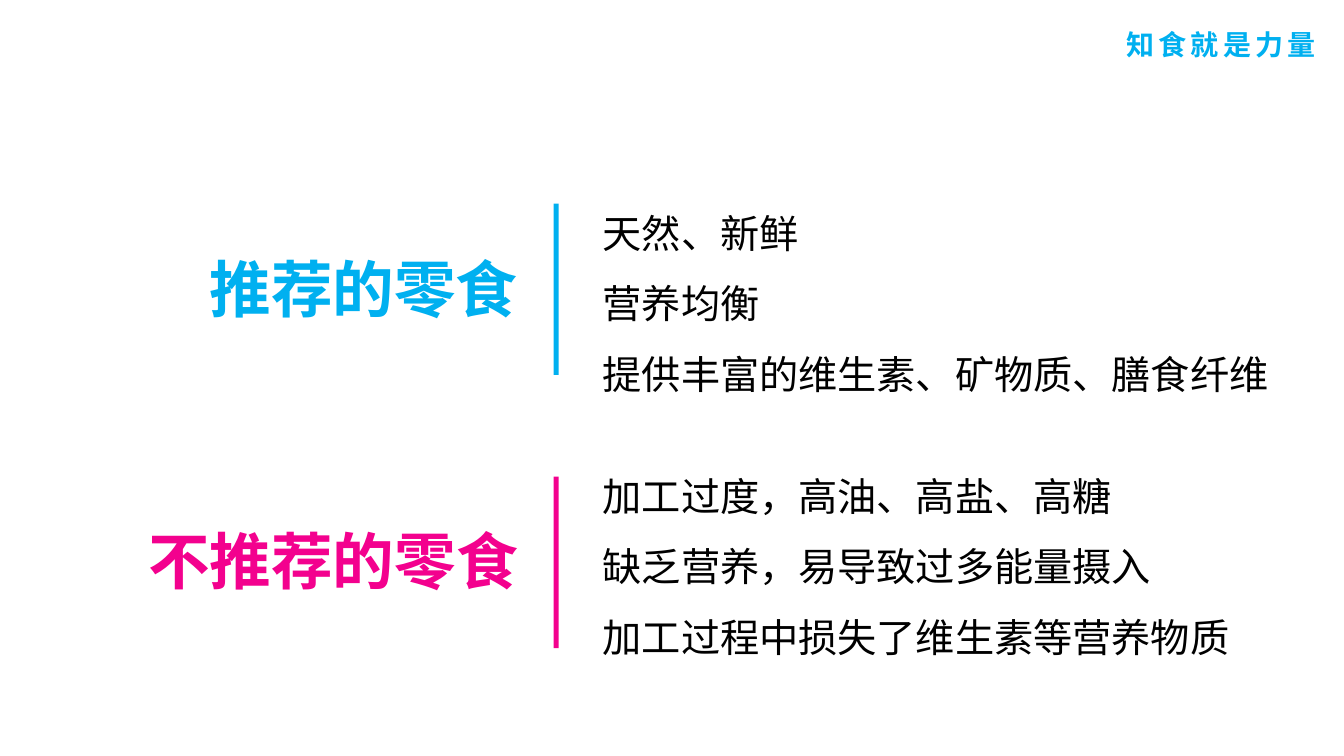
import pptx
import pptx.util
import pptx.dml.color
import pptx.enum.shapes
import pptx.enum.text
import pptx.oxml
import pptx.oxml.ns

Inches = pptx.util.Inches
RGBColor = pptx.dml.color.RGBColor
ALIGN = pptx.enum.text.PP_ALIGN

BLUE = RGBColor(0x00, 0xB0, 0xF0)
PINK = RGBColor(0xF3, 0x01, 0x8E)
BLACK = RGBColor(0x00, 0x00, 0x00)
FONT = "Noto Sans CJK SC"


def add_text(slide, box, lines, size, color, bold=False,
             align=ALIGN.LEFT, leading=1.0, gap=0):
    """Add a text box with one paragraph per line; gap is in points."""
    shape = slide.shapes.add_textbox(*(Inches(n) for n in box))
    frame = shape.text_frame
    frame.word_wrap = True
    frame.auto_size = pptx.enum.text.MSO_AUTO_SIZE.SHAPE_TO_FIT_TEXT
    for i, line in enumerate(lines):
        para = frame.paragraphs[0] if i == 0 else frame.add_paragraph()
        para.alignment = align
        para.line_spacing = leading
        run = para.add_run()
        run.text = line
        font = run.font
        font.name = FONT
        font.size = pptx.util.Pt(size)
        font.bold = bold
        font.color.rgb = color
        # East Asian typeface and letter spacing
        props = run._r.get_or_add_rPr()
        props.set("lang", "zh-CN")
        if gap:
            props.set("spc", str(gap * 100))
        east = pptx.oxml.parse_xml(
            f'<a:ea {pptx.oxml.ns.nsdecls("a")} typeface="{FONT}"/>')
        props.find(pptx.oxml.ns.qn("a:latin")).addnext(east)


def add_bar(slide, top, color):
    """Add the upright bar between a heading and its list."""
    bar = slide.shapes.add_shape(
        pptx.enum.shapes.MSO_SHAPE.RECTANGLE,
        Inches(5.49), Inches(top), Inches(0.05), Inches(1.7))
    bar.shadow.inherit = False
    bar.fill.solid()
    bar.fill.fore_color.rgb = color
    bar.line.fill.background()


def add_group(slide, title, box, points, top, width, bar_top, color):
    """Add a heading, its bar and its list of points."""
    add_text(slide, box, [title], 44, color, bold=True)
    add_text(slide, (5.88, top, width, 2.16), points, 28, BLACK, leading=1.5)
    add_bar(slide, bar_top, color)


def main():
    deck = pptx.Presentation()
    deck.slide_width = Inches(13.33)
    deck.slide_height = Inches(7.5)
    slide = deck.slides.add_slide(deck.slide_layouts[6])

    # Running header
    add_text(slide, (10.79, 0.22, 2.64, 0.44), ["知食就是力量"], 20, BLUE,
             bold=True, align=ALIGN.CENTER, gap=3)

    # Recommended snacks
    add_group(slide, "推荐的零食", (1.98, 2.44, 3.34, 0.84),
              ["天然、新鲜", "营养均衡", "提供丰富的维生素、矿物质、膳食纤维"],
              1.79, 7.14, 2.02, BLUE)

    # Snacks to avoid
    add_group(slide, "不推荐的零食", (1.37, 5.14, 4.12, 0.84),
              ["加工过度，高油、高盐、高糖", "缺乏营养，易导致过多能量摄入",
               "加工过程中损失了维生素等营养物质"],
              4.4, 6.74, 4.73, PINK)

    deck.save("out.pptx")


if __name__ == "__main__":
    main()
